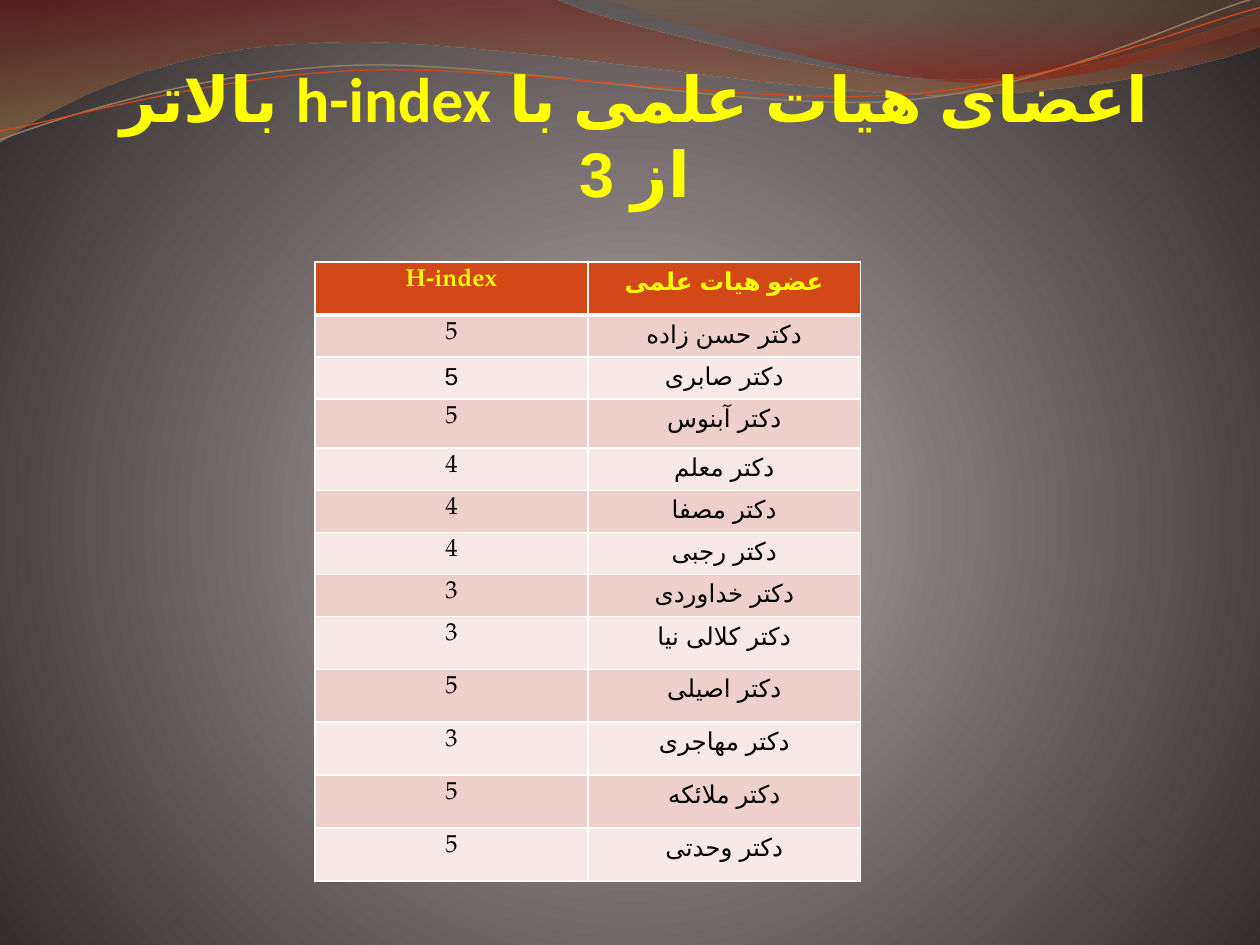
from dataclasses import dataclass
from typing import NamedTuple

from lxml.etree import SubElement
from pptx import Presentation
from pptx.dml.color import RGBColor
from pptx.enum.lang import MSO_LANGUAGE_ID
from pptx.enum.text import MSO_ANCHOR, PP_ALIGN
from pptx.oxml.ns import qn
from pptx.util import Emu, Inches, Pt

COLUMNS, ROWS = 10, 7.5
UNIT = Inches(1)  # one grid column wide, one grid row high
FINE = 100  # outline steps in one grid unit


class Stop(NamedTuple):
    share: int
    color: str
    opacity: int = 100


@dataclass(frozen=True)
class Theme:
    backdrop: tuple = (Stop(0, "9C9292"), Stop(25, "958D8D"), Stop(100, "302929"))
    title_font: str = "Calibri"
    table_font: str = "TeX Gyre Pagella"
    persian_font: str = "Arial"
    title_size: int = 36
    table_size: int = 14
    highlight: str = "FFFF00"
    body: str = "000000"
    header_fill: str = "D34817"
    bands: tuple = ("EFCFCC", "F7E9E8")
    border: str = "FFFFFF"


class Wave(NamedTuple):
    """Each step holds one point for a line, three for a Bezier curve."""
    start: tuple
    steps: tuple
    stops: tuple = ()
    line: str = ""
    weight: float = 0


class Member(NamedTuple):
    name: str
    h_index: int
    height: float = 0.32
    rtl_index: bool = False


THEME = Theme()

WAVES = (
    Wave((0, 0), (
        ((4.4, -0.01),),
        ((4.76, 0.17), (6.64, 0.63), (7.58, 0.63)),
        ((8.53, 0.63), (9.58, 0.26), (10, 0.09)),
        ((10.01, 0.36),),
        ((9.83, 0.44), (8.7, 0.76), (7.46, 0.75)),
        ((6.22, 0.75), (3.82, 0.28), (2.57, 0.34)),
        ((1.29, 0.36), (0.46, 0.83), (-0.01, 1.13)),
    ), stops=(Stop(0, "7C1A0E", 45), Stop(100, "A18552", 55))),
    Wave((4.79, -0.01), (
        ((5.09, 0.11), (6.82, 0.62), (7.69, 0.65)),
        ((8.56, 0.69), (9.61, 0.32), (10, 0.21)),
        ((10, 0),),
    ), stops=(Stop(0, "7E6B48", 30), Stop(80, "9F1705", 45))),
    Wave((0, 1.11), (
        ((0.48, 0.93), (1.58, 0.57), (2.77, 0.52)),
        ((3.95, 0.47), (5.93, 0.89), (7.13, 0.8)),
        ((8.33, 0.71), (9.38, 0.15), (9.98, -0.02)),
    ), line="8F7D5E", weight=0.85),
    Wave((0, 1.04), (
        ((0.47, 0.96), (1.64, 0.61), (2.83, 0.56)),
        ((4.03, 0.51), (5.97, 0.84), (7.17, 0.75)),
        ((8.36, 0.67), (9.41, 0.21), (10, 0.06)),
    ), line="D34817", weight=0.75),
)

TITLE = "اعضای هیات علمی با h-index بالاتر از 3"
HEADER = ("H-index", "عضو هیات علمی")
TALL = 0.42
MEMBERS = (
    Member("دکتر حسن زاده", 5),
    Member("دکتر صابری", 5, rtl_index=True),
    Member("دکتر آبنوس", 5, 0.39),
    Member("دکتر معلم", 4),
    Member("دکتر مصفا", 4),
    Member("دکتر رجبی", 4),
    Member("دکتر خداوردی", 3),
    Member("دکتر کلالی نیا", 3, TALL),
    Member("دکتر اصیلی", 5, TALL),
    Member("دکتر مهاجری", 3, TALL),
    Member("دکتر ملائکه", 5, TALL),
    Member("دکتر وحدتی", 5, TALL),
)


def grid(units: float) -> Emu:
    return Emu(round(units * UNIT))


def fill_gradient(fill, owner, stops: tuple, radial: bool = False) -> None:
    fill.gradient()
    gradient = owner.find(".//" + qn("a:gradFill"))
    for child in list(gradient):
        gradient.remove(child)
    stop_list = SubElement(gradient, qn("a:gsLst"))
    for stop in stops:
        mark = SubElement(stop_list, qn("a:gs"), pos=str(stop.share * 1000))
        color = SubElement(mark, qn("a:srgbClr"), val=stop.color)
        if stop.opacity < 100:
            SubElement(color, qn("a:alpha"), val=str(stop.opacity * 1000))
    if radial:
        circle = SubElement(gradient, qn("a:path"), {"path": "circle"})
        SubElement(circle, qn("a:fillToRect"), l="10000", t="110000", r="10000", b="100000")
    else:
        SubElement(gradient, qn("a:lin"), ang="5400000", scaled="0")


def bend(outline, steps: tuple) -> None:
    """Join each three line segments that stand for a Bezier curve."""
    segments = iter(outline.findall(qn("a:lnTo")))
    for step in steps:
        group = [next(segments) for _ in step]
        if len(group) == 3:
            curve = outline.makeelement(qn("a:cubicBezTo"))
            group[0].addprevious(curve)
            for segment in group:
                curve.append(segment[0])
                outline.remove(segment)


def draw_wave(slide, wave: Wave) -> None:
    start, *points = [(round(x * FINE), round(y * FINE))
                      for x, y in (wave.start, *(p for step in wave.steps for p in step))]
    builder = slide.shapes.build_freeform(*start, scale=UNIT / FINE)
    builder.add_line_segments(points, close=bool(wave.stops))
    shape = builder.convert_to_shape()
    bend(shape.element.find(".//" + qn("a:path")), wave.steps)
    shape.shadow.inherit = False
    if wave.stops:
        fill_gradient(shape.fill, shape.element.spPr, wave.stops)
        shape.line.fill.background()
    else:
        shape.fill.background()
        shape.line.color.rgb = RGBColor.from_string(wave.line)
        shape.line.width = Pt(wave.weight)


def write(frame, text: str, font: str, size: int, color: str, bold: bool, rtl: bool) -> None:
    paragraph = frame.paragraphs[0]
    paragraph.text = text
    paragraph.runs[0].font.language_id = MSO_LANGUAGE_ID.FARSI
    paragraph.alignment = PP_ALIGN.CENTER
    paragraph.font.name, paragraph.font.size = font, Pt(size)
    paragraph.font.bold = bold
    paragraph.font.color.rgb = RGBColor.from_string(color)
    properties = paragraph._p.get_or_add_pPr()
    SubElement(properties.find(qn("a:defRPr")), qn("a:cs"), typeface=THEME.persian_font)
    if rtl:
        properties.set("rtl", "1")


def draw_title(slide) -> None:
    frame = slide.shapes.add_textbox(grid(0.75), grid(-0.33), grid(8.59), grid(2)).text_frame
    frame.word_wrap = True
    frame.vertical_anchor = MSO_ANCHOR.BOTTOM
    frame.margin_left = frame.margin_top = frame.margin_bottom = 0
    frame.margin_right = grid(0.02)
    write(frame, TITLE, THEME.title_font, THEME.title_size, THEME.highlight, True, True)


def draw_cell(cell, text: str, fill: str, header: bool = False, rtl: bool = False) -> None:
    write(cell.text_frame, text, THEME.table_font, THEME.table_size,
          THEME.highlight if header else THEME.body, header, rtl)
    properties = cell._tc.get_or_add_tcPr()
    for side in ("lnL", "lnR", "lnT", "lnB"):
        weight = 3 if header and side == "lnB" else 1
        border = SubElement(properties, qn(f"a:{side}"), w=str(Pt(weight)))
        SubElement(SubElement(border, qn("a:solidFill")), qn("a:srgbClr"), val=THEME.border)
    cell.fill.solid()
    cell.fill.fore_color.rgb = RGBColor.from_string(fill)


def draw_table(slide) -> None:
    heights = [TALL] + [member.height for member in MEMBERS]
    table = slide.shapes.add_table(len(heights), len(HEADER), grid(2.5), grid(2.08),
                                   grid(4.33), grid(sum(heights))).table
    for row, height in zip(table.rows, heights):
        row.height = grid(height)
    for column, label in enumerate(HEADER):
        draw_cell(table.cell(0, column), label, THEME.header_fill, header=True)
    for row, member in enumerate(MEMBERS, start=1):
        band = THEME.bands[(row - 1) % 2]
        draw_cell(table.cell(row, 0), str(member.h_index), band, rtl=member.rtl_index)
        draw_cell(table.cell(row, 1), member.name, band)


def main() -> None:
    deck = Presentation()
    deck.slide_width, deck.slide_height = grid(COLUMNS), grid(ROWS)
    slide = deck.slides.add_slide(deck.slide_layouts[6])
    fill_gradient(slide.background.fill, slide.element, THEME.backdrop, radial=True)
    for wave in WAVES:
        draw_wave(slide, wave)
    draw_title(slide)
    draw_table(slide)
    deck.save("out.pptx")


if __name__ == "__main__":
    main()
